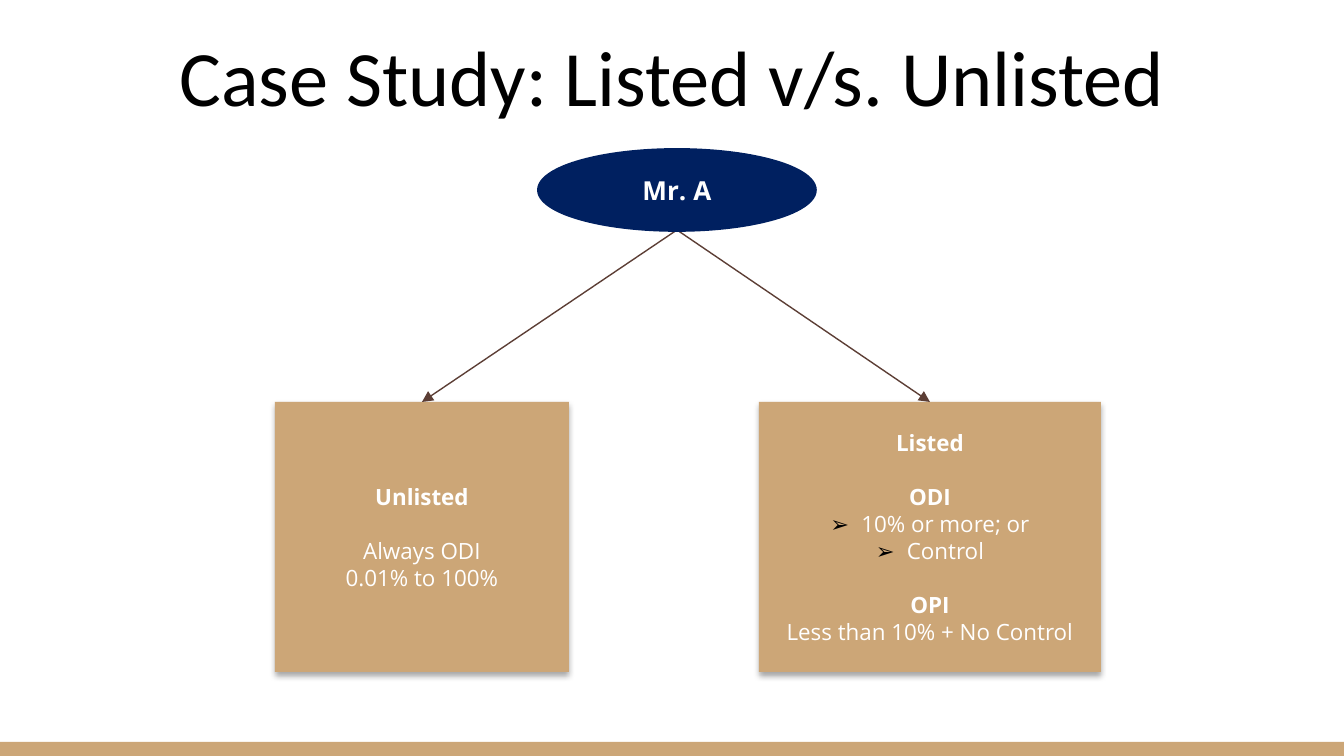
from lxml.etree import SubElement
from pptx import Presentation
from pptx.dml.color import RGBColor
from pptx.enum.shapes import MSO_CONNECTOR, MSO_SHAPE
from pptx.enum.text import MSO_ANCHOR, PP_ALIGN
from pptx.oxml.ns import qn
from pptx.util import Pt

PX = 914400 / 134.4
COLORS = {"tan": "CCA677", "navy": "002060", "brown": "5C3E35",
          "white": "FFFFFF", "black": "000000"}
TITLE = {"name": "Calibri", "size": Pt(42), "bold": False}
OWNER = {"name": "Open Sans", "size": Pt(14), "bold": True}
HEADING = {"name": "Open Sans", "size": Pt(12), "bold": True}
BODY = HEADING | {"bold": False}
GAP = Pt(14.5)
BULLET_INDENT = 31


def emu(px):
    return round(px * PX)


def color(name):
    return RGBColor.from_string(COLORS[name])


class SlideBuilder:
    def __init__(self, deck, layout_index):
        self.slide = deck.slides.add_slide(deck.slide_layouts[layout_index])

    def add_text(self, para, text, style, ink):
        para.alignment = PP_ALIGN.CENTER
        span = para.add_run()
        span.text = text
        for key, value in style.items():
            setattr(span.font, key, value)
        span.font.color.rgb = color(ink)

    def title(self, text, left, top, width, height):
        box = self.slide.shapes.title
        place = {"left": left, "top": top, "width": width, "height": height}
        for key, value in place.items():
            setattr(box, key, emu(value))
        frame = box.text_frame
        frame.vertical_anchor = MSO_ANCHOR.BOTTOM
        for side in ("left", "top", "right", "bottom"):
            setattr(frame, f"margin_{side}", emu(13))
        self.add_text(frame.paragraphs[0], text, TITLE, "black")

    def shape(self, kind, left, top, width, height, fill, outline=None):
        shape = self.slide.shapes.add_shape(kind, *map(emu, (left, top, width, height)))
        shape.shadow.inherit = False
        shape.fill.solid()
        shape.fill.fore_color.rgb = color(fill)
        if outline:
            shape.line.color.rgb = color(outline)
            shape.line.width = Pt(2)
        else:
            shape.line.fill.background()
        return shape

    def drop_shadow(self, shape):
        effects = shape._element.spPr.find(qn("a:effectLst"))
        shadow = SubElement(effects, qn("a:outerShdw"), blurRad="40000",
                            dist="23000", dir="5400000", rotWithShape="0")
        ink = SubElement(shadow, qn("a:srgbClr"), val=COLORS["black"])
        SubElement(ink, qn("a:alpha"), val="35000")

    def bullet(self, para):
        properties = para._p.get_or_add_pPr()
        properties.set("marL", str(emu(BULLET_INDENT)))
        properties.set("indent", str(-emu(BULLET_INDENT)))
        ink = SubElement(properties, qn("a:buClr"))
        SubElement(ink, qn("a:srgbClr"), val=COLORS["black"])
        SubElement(properties, qn("a:buFont"), typeface="Open Sans")
        SubElement(properties, qn("a:buChar"), char="➢")

    def card(self, left, top, width, height, lines):
        card = self.shape(MSO_SHAPE.RECTANGLE, left, top, width, height, "tan")
        self.drop_shadow(card)
        frame = card.text_frame
        frame.word_wrap = True
        frame.vertical_anchor = MSO_ANCHOR.MIDDLE
        for index, (text, style, bulleted, gap) in enumerate(lines):
            para = frame.add_paragraph() if index else frame.paragraphs[0]
            if gap:
                para.space_before = GAP
            if bulleted:
                self.bullet(para)
            self.add_text(para, text, style, "white")
        return card

    def oval(self, text, left, top, width, height):
        oval = self.shape(MSO_SHAPE.OVAL, left, top, width, height, "navy", "navy")
        oval.text_frame.vertical_anchor = MSO_ANCHOR.MIDDLE
        self.add_text(oval.text_frame.paragraphs[0], text, OWNER, "white")

    def arrow(self, left, top, target):
        arrow = self.slide.shapes.add_connector(
            MSO_CONNECTOR.STRAIGHT, emu(left), emu(top), target.left, target.top)
        arrow.end_connect(target, 0)
        arrow.line.color.rgb = color("brown")
        arrow.line.width = Pt(0.75)
        properties = arrow._element.spPr
        SubElement(properties.find(qn("a:ln")), qn("a:tailEnd"), type="triangle")
        SubElement(properties, qn("a:effectLst"))


def main():
    deck = Presentation()
    deck.slide_width, deck.slide_height = emu(1344), emu(756)
    page = SlideBuilder(deck, 5)
    page.shape(MSO_SHAPE.RECTANGLE, 0, 742, 1344, 14, "tan")
    page.title("Case Study: Listed v/s. Unlisted", 46, 13, 1252, 122)
    unlisted = page.card(275, 402, 294, 270, [
        ("Unlisted", HEADING, False, False),
        ("Always ODI", BODY, False, True),
        ("0.01% to 100%", BODY, False, False),
    ])
    listed = page.card(759, 402, 342, 270, [
        ("Listed", HEADING, False, False),
        ("ODI", HEADING, False, True),
        ("10% or more; or", BODY, True, False),
        ("Control", BODY, True, False),
        ("OPI", HEADING, False, True),
        ("Less than 10% + No Control", BODY, False, False),
    ])
    for target in (unlisted, listed):
        page.arrow(677, 230, target)
    page.oval("Mr. A", 539, 150, 276, 80)
    deck.save("out.pptx")


if __name__ == "__main__":
    main()
